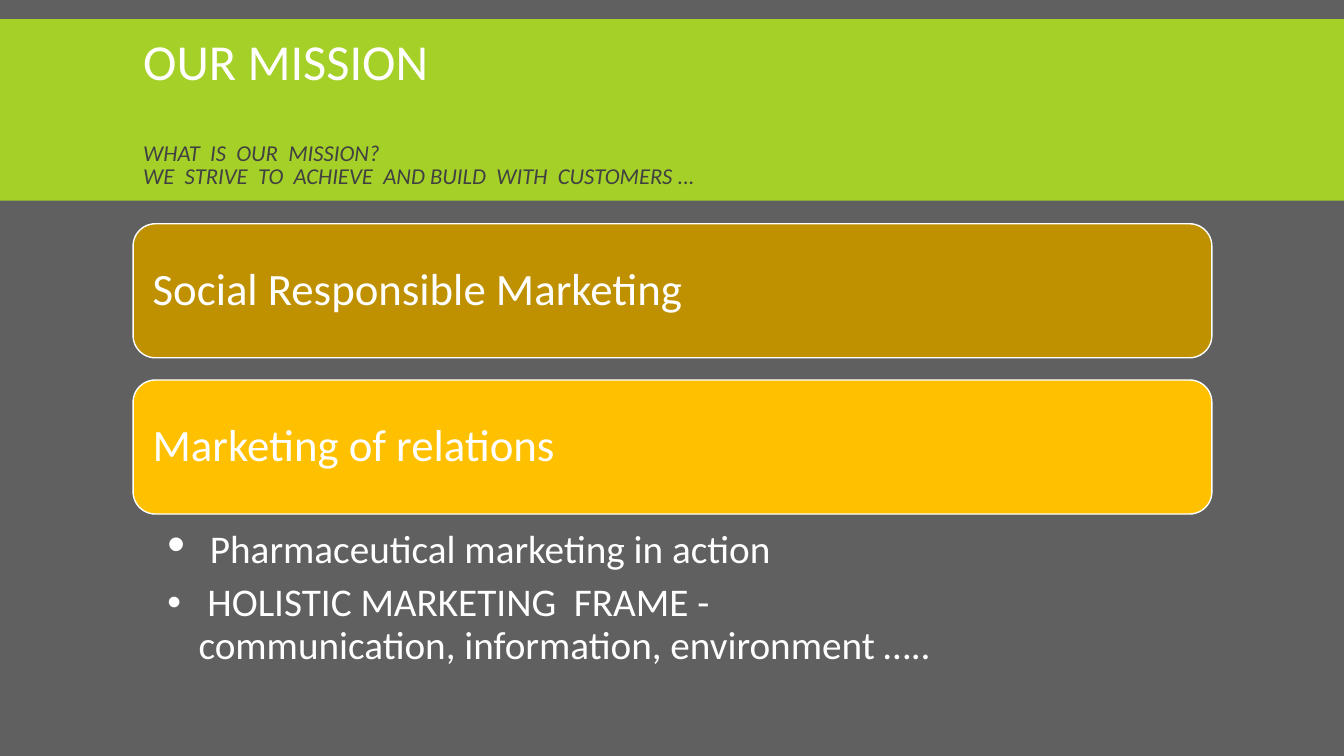
from copy import deepcopy
from lxml.etree import SubElement
from pptx import Presentation
from pptx.dml.color import RGBColor
from pptx.enum.shapes import MSO_SHAPE
from pptx.enum.text import MSO_ANCHOR, MSO_AUTO_SIZE, PP_ALIGN
from pptx.oxml.ns import qn
from pptx.util import Inches, Pt

WHITE, GREY, GREEN, INK = "FFFFFF", "606060", "A5D028", "414141"
# Each run: lines, size, colour, italic
TITLE = [
    (["OUR MISSION", "", ""], 36, WHITE, False),
    (["WHAT  IS  OUR  MISSION?",
      "WE  STRIVE  TO  ACHIEVE  AND BUILD  WITH  CUSTOMERS ..."], 16.2, INK, True),
]
CARDS = [("Social Responsible Marketing", "BF9000"),
         ("Marketing of relations", "FFC000")]
POINTS = [
    [([" "], 36), (["Pharmaceutical marketing in action"], 28)],
    [([" HOLISTIC MARKETING  FRAME -",
       "communication, information, environment ….."], 28)],
]
WIDE, HIGH = 13.33, 7.5
LEFT, SPAN = 1.32, 10.7
TOP, CARD, STEP = 2.22, 1.33, 1.55


def color(code):
    return RGBColor.from_string(code)


def place(left, top, width, height):
    return [Inches(n) for n in (left, top, width, height)]


def write(para, lines, size, code=WHITE, slant=False):
    """Add one run per line, with line breaks of the same size between."""
    for i, line in enumerate(lines):
        if i:
            para.add_line_break()
            gap = para._p.findall(qn("a:br"))[-1]
        run = para.add_run()
        run.text = line
        font = run.font
        font.name, font.size, font.italic = "Calibri", Pt(size), slant
        font.color.rgb = color(code)
        if i:
            gap.append(deepcopy(run._r.rPr))
        if not line:
            para._p.remove(run._r)


def setup(frame, anchor, sides):
    frame.word_wrap = True
    frame.auto_size = MSO_AUTO_SIZE.NONE
    frame.vertical_anchor = anchor
    (frame.margin_left, frame.margin_top,
     frame.margin_right, frame.margin_bottom) = [Inches(n) for n in sides]


def block(slide, kind, box, code):
    shape = slide.shapes.add_shape(kind, *place(*box))
    shape.shadow.inherit = False
    shape.fill.solid()
    shape.fill.fore_color.rgb = color(code)
    shape.line.fill.background()
    return shape


def bullet(para):
    props = para._p.get_or_add_pPr()
    props.set("marL", str(Inches(0.31)))
    props.set("indent", str(-Inches(0.31)))
    SubElement(props, qn("a:buFont"), typeface="Arial")
    SubElement(props, qn("a:buChar"), char="•")


def main():
    deck = Presentation()
    deck.slide_width, deck.slide_height = Inches(WIDE), Inches(HIGH)
    slide = deck.slides.add_slide(deck.slide_layouts[5])
    slide.background.fill.solid()
    slide.background.fill.fore_color.rgb = color(GREY)

    band = block(slide, MSO_SHAPE.RECTANGLE, (0, 0.19, WIDE, 1.8), GREEN)
    title = slide.shapes.title
    title._element.addprevious(band._element)
    title.left, title.top, title.width, title.height = place(LEFT, 0.31, SPAN, 1.65)
    setup(title.text_frame, MSO_ANCHOR.MIDDLE, (0.1, 0.05, 0.1, 0.05))
    para = title.text_frame.paragraphs[0]
    para.alignment, para.line_spacing = PP_ALIGN.LEFT, 0.85
    for part in TITLE:
        write(para, *part)

    for row, (text, code) in enumerate(CARDS):
        box = (LEFT, TOP + row * STEP, SPAN, CARD)
        card = block(slide, MSO_SHAPE.ROUNDED_RECTANGLE, box, code)
        card.line.color.rgb = color(WHITE)
        card.line.width = Pt(1)
        setup(card.text_frame, MSO_ANCHOR.MIDDLE, [0.13] * 4)
        para = card.text_frame.paragraphs[0]
        para.alignment, para.line_spacing = PP_ALIGN.LEFT, 0.9
        write(para, [text], 32)

    notes = slide.shapes.add_textbox(*place(LEFT, 5.11, SPAN, 1.66)).text_frame
    setup(notes, MSO_ANCHOR.TOP, (0.34, 0.05, 0.28, 0.05))
    for i, parts in enumerate(POINTS):
        para = notes.add_paragraph() if i else notes.paragraphs[0]
        para.level, para.line_spacing, para.space_after = 1, 0.9, Pt(6)
        bullet(para)
        for part in parts:
            write(para, *part)

    deck.save("out.pptx")


if __name__ == "__main__":
    main()
